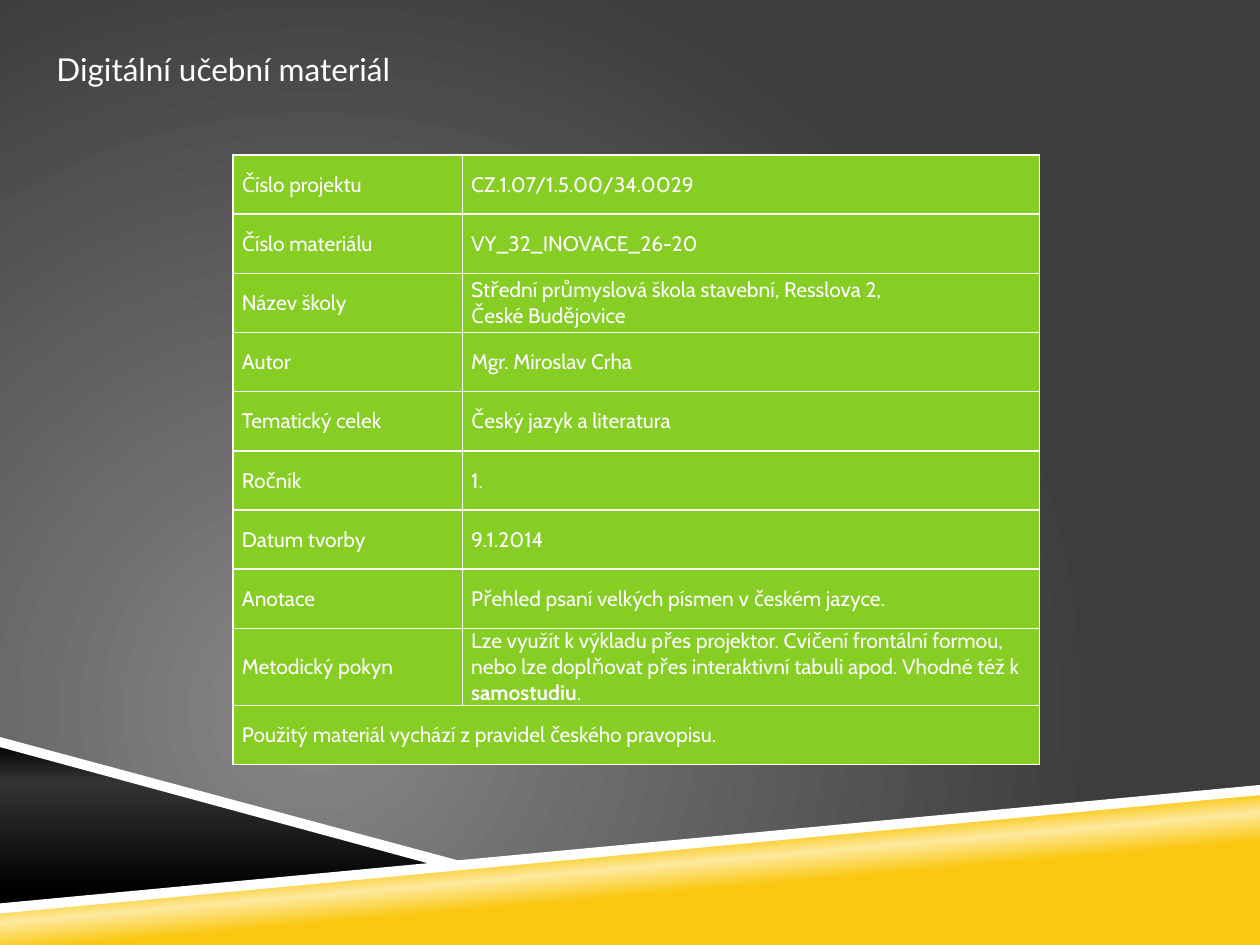
from lxml import etree
from pptx import Presentation
from pptx.dml.color import RGBColor
from pptx.enum.text import MSO_ANCHOR
from pptx.oxml import parse_xml
from pptx.oxml.ns import nsdecls, qn
from pptx.util import Inches, Pt

COLORS = {
    "white": "FFFFFF", "green": "86CE24", "gold": "FAC810", "pale gold": "FDE99F",
    "black": "000000", "charcoal": "333333", "gray": "878787", "dark gray": "3D3D3D",
}
ROWS = [
    ("Číslo projektu", "CZ.1.07/1.5.00/34.0029"),
    ("Číslo materiálu", "VY_32_INOVACE_26-20"),
    ("Název školy", "Střední průmyslová škola stavební, Resslova 2,\nČeské Budějovice"),
    ("Autor", "Mgr. Miroslav Crha"),
    ("Tematický celek", "Český jazyk a literatura"),
    ("Ročník", "1."),
    ("Datum tvorby", "9.1.2014"),
    ("Anotace", "Přehled psaní velkých písmen v českém jazyce."),
    ("Metodický pokyn",
     "Lze využít k výkladu přes projektor. Cvičení frontální formou, "
     "nebo lze doplňovat přes interaktivní tabuli apod. Vhodné též k "),
    ("Použitý materiál vychází z pravidel českého pravopisu.", ""),
]
METHOD_ROW = 8


def rgb(name):
    return RGBColor.from_string(COLORS[name])


def style_run(run, font_name, size):
    run.font.name = font_name
    run.font.size = Pt(size)
    run.font.color.rgb = rgb("white")


def set_gradient(fill, element, stops, direction):
    """Give the fill the (percent, color) stops and a direction element."""
    fill.gradient()
    gradient = next(element.iter(qn("a:gradFill")))
    stop_xml = "".join(
        f'<a:gs pos="{percent * 1000}"><a:srgbClr val="{COLORS[name]}"/></a:gs>'
        for percent, name in stops)
    gradient.getparent().replace(gradient, parse_xml(
        f'<a:gradFill {nsdecls("a")} rotWithShape="1">'
        f"<a:gsLst>{stop_xml}</a:gsLst>{direction}</a:gradFill>"))


def linear(degrees):
    return f'<a:lin ang="{degrees * 60000}" scaled="0"/>'


def add_polygon(slide, points):
    corners = [(Inches(x), Inches(y)) for x, y in points]
    builder = slide.shapes.build_freeform(*corners[0])
    builder.add_line_segments(corners[1:], close=True)
    shape = builder.convert_to_shape()
    shape.shadow.inherit = False
    shape.line.fill.background()
    return shape


def add_backdrop(slide):
    set_gradient(
        slide.background.fill, slide.element, [(0, "gray"), (100, "dark gray")],
        '<a:path path="circle"><a:fillToRect l="50000" t="100000" r="100000" b="50000"/></a:path>')


def add_footer(slide, left, right, bottom):
    # Gold ramp and black wedge
    ramp = add_polygon(slide, [(left, 7.21), (right, 6.27), (right, bottom), (left, bottom)])
    set_gradient(ramp.fill, ramp.element,
                 [(39, "gold"), (50, "pale gold"), (58, "gold")], linear(265))
    wedge = add_polygon(slide, [(left, 5.89), (left + 3.59, 6.85), (left, 7.21)])
    set_gradient(wedge.fill, wedge.element,
                 [(0, "black"), (24, "charcoal"), (90, "black")], linear(90))
    # White stripes along their upper edges
    for points in (
        [(right, 6.23), (left, 7.17), (left, 7.25), (right, 6.31)],
        [(left, 5.85), (left, 5.93), (left + 3.5, 6.88), (left + 3.75, 6.86)],
    ):
        stripe = add_polygon(slide, points)
        stripe.fill.solid()
        stripe.fill.fore_color.rgb = rgb("white")


def add_title(slide, left, top, width, height):
    box = slide.shapes.add_textbox(Inches(left), Inches(top), Inches(width), Inches(height))
    text_frame = box.text_frame
    text_frame.word_wrap = True
    text_frame.vertical_anchor = MSO_ANCHOR.MIDDLE
    text_frame.text = "Digitální učební materiál"
    style_run(text_frame.paragraphs[0].runs[0], "Lato", 18)


def set_borders(cell):
    properties = cell._tc.get_or_add_tcPr()
    for position, side in enumerate(("lnL", "lnR", "lnT", "lnB")):
        properties.insert(position, parse_xml(
            f'<a:{side} {nsdecls("a")} w="{Pt(1)}"><a:solidFill>'
            f'<a:srgbClr val="{COLORS["white"]}"/></a:solidFill></a:{side}>'))


def style_cell(cell):
    cell.vertical_anchor = MSO_ANCHOR.MIDDLE
    cell.margin_left = cell.margin_right = Inches(0.07)
    cell.margin_top = cell.margin_bottom = 0
    cell.fill.solid()
    cell.fill.fore_color.rgb = rgb("green")
    set_borders(cell)
    for paragraph in cell.text_frame.paragraphs:
        paragraph.font.size = Pt(12)
        for run in paragraph.runs:
            style_run(run, "Cabin", 12)


def add_details_table(slide, left, top, width, height):
    table = slide.shapes.add_table(
        len(ROWS), 2, Inches(left), Inches(top), Inches(width), Inches(height)).table
    table.first_row = table.horz_banding = False
    label_width = 1.82
    table.columns[0].width = Inches(label_width)
    table.columns[1].width = Inches(width - label_width)
    for row, texts in enumerate(ROWS):
        table.rows[row].height = Inches(0.47)
        for column, text in enumerate(texts):
            table.cell(row, column).text_frame.text = text
    # Bold word that closes the method note
    note = table.cell(METHOD_ROW, 1).text_frame.paragraphs[0]
    for text, bold in (("samostudiu", True), (".", False)):
        run = note.add_run()
        run.text = text
        run.font.bold = bold
    last = len(ROWS) - 1
    table.cell(last, 0).merge(table.cell(last, 1))
    for cell in table.iter_cells():
        style_cell(cell)


def main():
    presentation = Presentation()
    presentation.slide_width = Inches(10)
    presentation.slide_height = Inches(7.5)
    slide = presentation.slides.add_slide(presentation.slide_layouts[6])
    add_backdrop(slide)
    add_footer(slide, 0, 10, 7.5)
    add_details_table(slide, 1.85, 1.23, 6.4, 4.85)
    add_title(slide, 0.35, 0.3, 9.3, 0.5)
    presentation.save("out.pptx")


if __name__ == "__main__":
    main()
